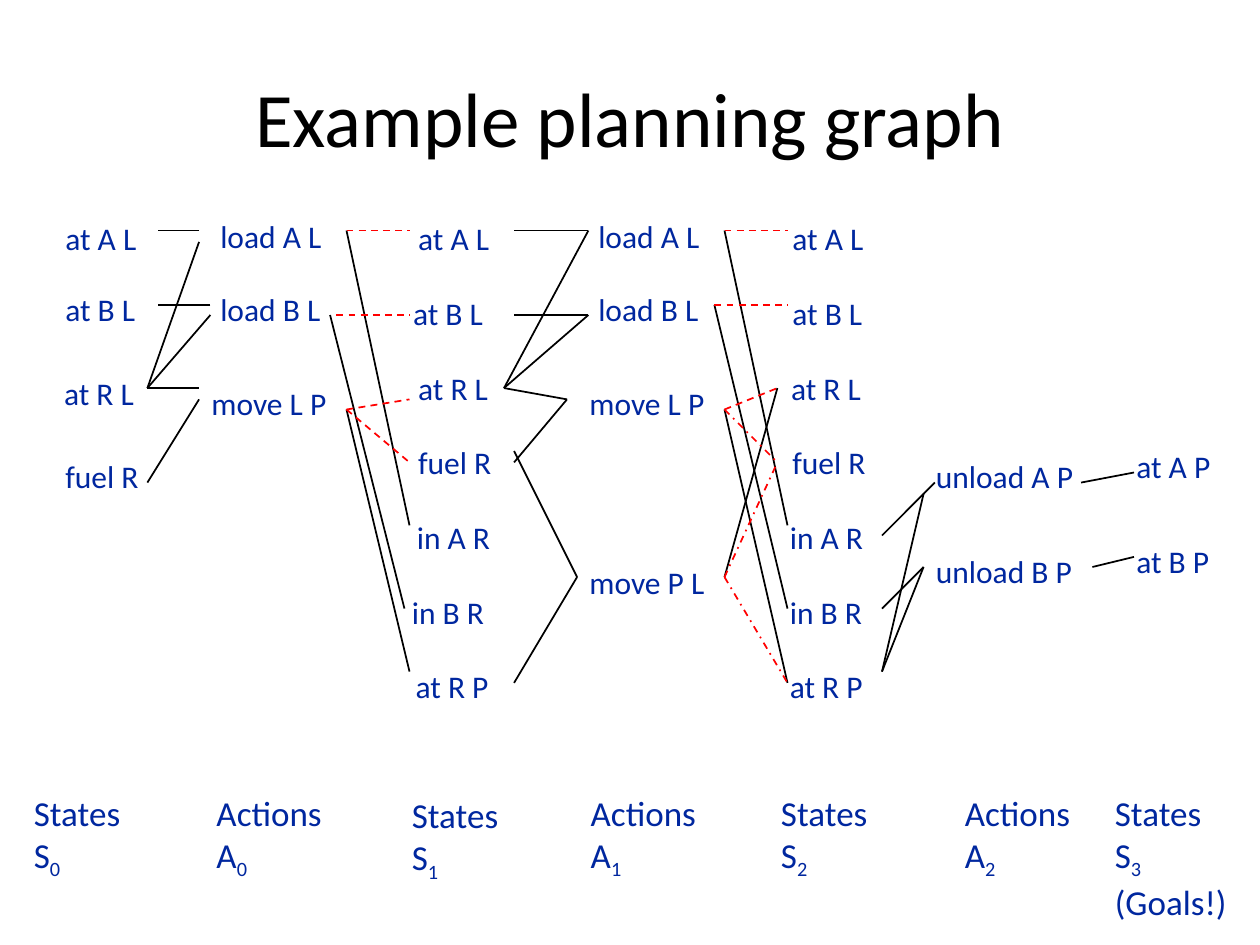
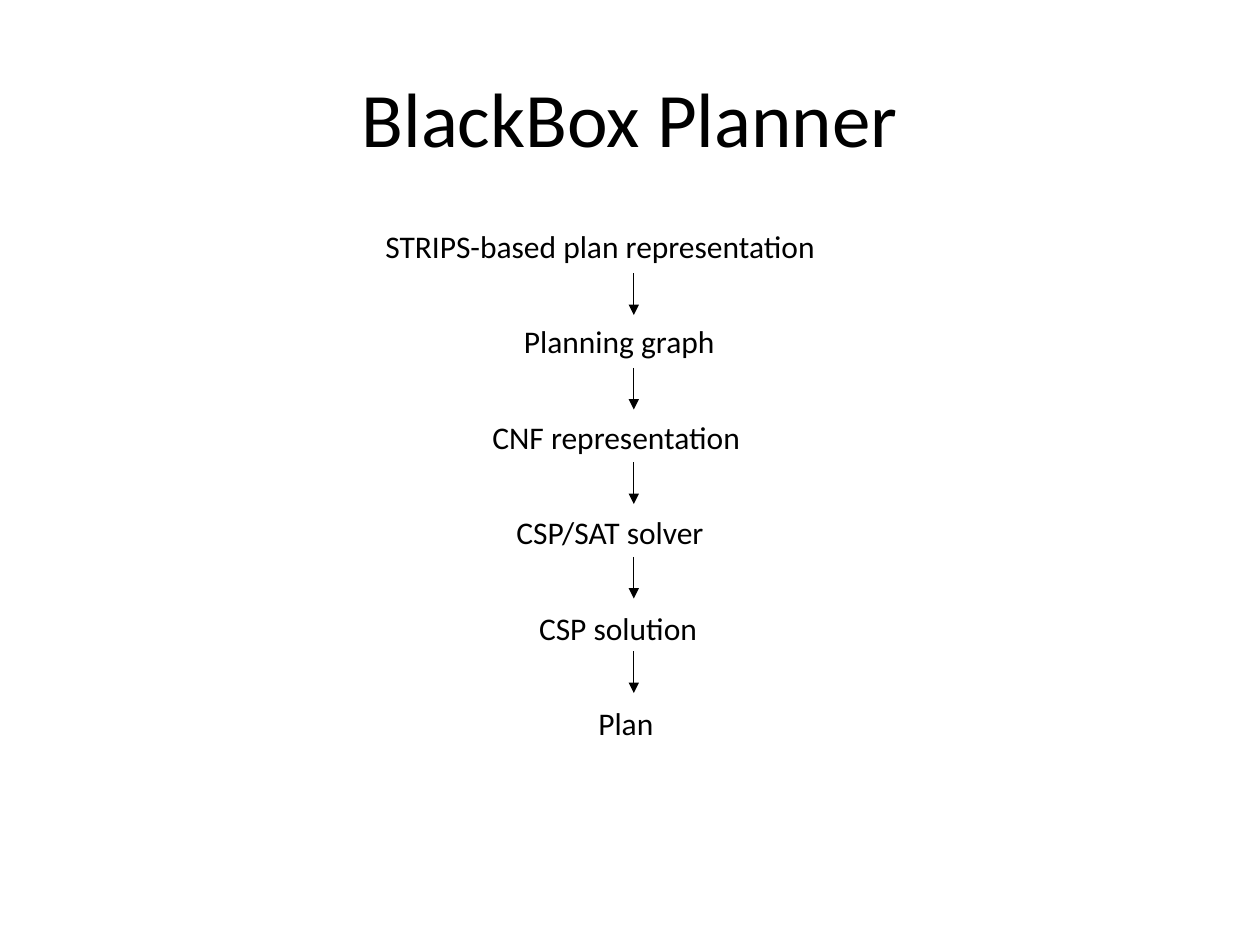
import dataclasses

import pptx
import pptx.dml.color
import pptx.enum.dml
import pptx.enum.shapes
import pptx.enum.text
import pptx.oxml
import pptx.oxml.ns
import pptx.util

Inches = pptx.util.Inches
Dash = pptx.enum.dml.MSO_LINE


@dataclasses.dataclass(frozen=True)
class Theme:
    font: str = "Calibri"
    ink: str = "000000"
    label: str = "00279F"
    mutex: str = "FF0000"
    title_size: int = 44
    layer_size: int = 20
    body_size: int = 18
    edge_width: float = 1
    arrow_width: float = 0.75
    title_box: tuple = (0.5, 0.3, 9, 1.25)


THEME = Theme()

# ---- Content: planning graph ----
GRAPH_TITLE = "Example planning graph"

# Layer caption ("_" starts a subscript), left, top, width
LAYERS = [
    ("States\nS_0", 0.17, 6.23, 0.93),
    ("Actions\nA_0", 1.62, 6.23, 1.04),
    ("States\nS_1", 3.17, 6.25, 0.93),
    ("Actions\nA_1", 4.59, 6.23, 1.04),
    ("States\nS_2", 6.1, 6.23, 0.93),
    ("Actions\nA_2", 7.56, 6.23, 1.04),
    ("States\nS_3\n(Goals!)", 8.75, 6.23, 1.1),
]

# First and last layers: text, left, top
INITIAL_STATE = [("at A L", 0.42, 1.69), ("at B L", 0.42, 2.25),
                 ("at R L", 0.41, 2.92), ("fuel R", 0.42, 3.58)]
UNLOADING = [("unload A P", 7.33, 3.58), ("unload B P", 7.33, 4.33)]
GOALS = [("at A P", 8.92, 3.5), ("at B P", 8.92, 4.25)]

# Actions repeated in A0 and A1: text, left in A0, top
LOADING = [("load A L", 1.65, 1.67), ("load B L", 1.65, 2.25), ("move L P", 1.58, 3)]
ACTION_LAYER_STEP = 3
RETURN_MOVE = ("move P L", 4.58, 4.42)

# Facts repeated in S1 and S2, with their lefts in each
FACTS = ["at A L", "at B L", "at R L", "fuel R", "in A R", "in B R", "at R P"]
FACT_LEFTS = [
    (3.22, 3.18, 3.22, 3.22, 3.21, 3.17, 3.2),
    (6.19, 6.19, 6.18, 6.19, 6.17, 6.17, 6.17),
]
FACT_TOP, FACT_STEP = 1.69, 0.593

# Label widths by leading word
LABEL_WIDTHS = {"at": 0.78, "fuel": 0.79, "in": 0.79, "load": 1.02,
                "move": 1.13, "unload": 1.3}
LOCATION_P_WIDTH = 0.82

# Edges: shared end, then the other ends
PRECONDITIONS = [
    ((1.58, 1.83), [(1.25, 1.83)]),
    ((1.17, 3.08), [(1.58, 1.92), (1.67, 2.5), (1.58, 3.08)]),
    ((1.67, 2.42), [(1.25, 2.42)]),
    ((1.58, 3.17), [(1.17, 3.83)]),
    ((4.67, 1.83), [(4.08, 1.83), (4, 3.08)]),
    ((4.67, 2.5), [(4.08, 2.5), (4, 3.08)]),
    ((4.5, 3.17), [(4.08, 3.67), (4, 3.08)]),
    ((4.58, 4.58), [(4.08, 3.58), (4.08, 5.42)]),
    ((7.42, 3.83), [(7, 4.25)]),
    ((7.33, 3.92), [(7, 5.33)]),
    ((7.33, 4.5), [(7, 4.83), (7, 5.33)]),
]
ADDED_FACTS = [
    ((2.75, 1.83), [(3.25, 4.17)]),
    ((2.62, 2.5), [(3.21, 4.83)]),
    ((2.75, 3.25), [(3.25, 5.33)]),
    ((5.75, 1.83), [(6.25, 4.17)]),
    ((5.67, 2.42), [(6.25, 4.83)]),
    ((5.75, 3.25), [(6.25, 5.42)]),
    ((5.75, 4.58), [(6.17, 3.08)]),
    ((8.58, 3.83), [(9, 3.75)]),
    ((8.67, 4.5), [(9, 4.42)]),
]
DELETED_FACTS = [
    ((2.75, 1.83), [(3.25, 1.83)]),
    ((2.67, 2.5), [(3.25, 2.5)]),
    ((2.75, 3.25), [(3.25, 3.17), (3.25, 3.67)]),
    ((5.75, 1.83), [(6.25, 1.83)]),
    ((5.67, 2.42), [(6.25, 2.42)]),
    ((5.75, 3.25), [(6.17, 3.08)]),
]
DELETED_BY_MOVES = [
    ((5.75, 3.25), [(6.17, 3.67)]),
    ((5.75, 4.58), [(6.25, 5.42), (6.17, 3.67)]),
]
EDGE_STYLES = [
    (PRECONDITIONS, THEME.ink, None),
    (ADDED_FACTS, THEME.ink, None),
    (DELETED_FACTS, THEME.mutex, Dash.DASH),
    (DELETED_BY_MOVES, THEME.mutex, Dash.DASH_DOT),
]

# ---- Content: planner pipeline ----
PIPELINE_TITLE = "BlackBox Planner"
STAGES = [  # text, left, width
    ("STRIPS-based plan representation", 2.96, 3.66),
    ("Planning graph", 4.06, 1.74),
    ("CNF representation", 3.81, 2.2),
    ("CSP/SAT solver", 4, 1.74),
    ("CSP solution", 4.18, 1.47),
    ("Plan", 4.65, 0.64),
]
STAGE_TOP, STAGE_STEP = 1.75, 0.758
ARROW_X, ARROW_TOP, ARROW_STEP, ARROW_LENGTH = 5.03, 2.17, 0.75, 0.33


# ---- Helpers ----
def write(frame, text, *, size, color, align=None):
    """Fill a text frame; each line is a paragraph, "_" starts a subscript."""
    for index, line in enumerate(text.split("\n")):
        paragraph = frame.add_paragraph() if index else frame.paragraphs[0]
        paragraph.alignment = align
        base, _, subscript = line.partition("_")
        for part, baseline in ((base, None), (subscript, "-25000")):
            if not part:
                continue
            run = paragraph.add_run()
            run.text = part
            run.font.name = THEME.font
            run.font.size = pptx.util.Pt(size)
            run.font.color.rgb = pptx.dml.color.RGBColor.from_string(color)
            if baseline:
                run.font._element.set("baseline", baseline)


def add_label(slide, text, left, top, width, *, size=THEME.body_size, color=THEME.label):
    height = 0.1 + (text.count("\n") + 1) * size / 60
    label = slide.shapes.add_textbox(*map(Inches, (left, top, width, height)))
    label.text_frame.word_wrap = False
    label.text_frame.auto_size = pptx.enum.text.MSO_AUTO_SIZE.SHAPE_TO_FIT_TEXT
    write(label.text_frame, text, size=size, color=color)


def add_node(slide, text, left, top):
    width = LABEL_WIDTHS[text.split()[0]]
    if text.startswith("at") and text.endswith("P"):
        width = LOCATION_P_WIDTH
    add_label(slide, text, left, top, width)


def add_edge(slide, start, end, *, color=THEME.ink, width=THEME.edge_width,
             dash=None, arrow=False):
    edge = slide.shapes.add_connector(
        pptx.enum.shapes.MSO_CONNECTOR.STRAIGHT, *map(Inches, (*start, *end)))
    edge.line.color.rgb = pptx.dml.color.RGBColor.from_string(color)
    edge.line.width = pptx.util.Pt(width)
    if dash:
        edge.line.dash_style = dash
    properties = edge._element.spPr
    if arrow:
        head = pptx.oxml.parse_xml(
            f'<a:tailEnd {pptx.oxml.ns.nsdecls("a")} type="triangle"/>')
        properties.find(pptx.oxml.ns.qn("a:ln")).append(head)
    properties.append(pptx.oxml.parse_xml(f'<a:effectLst {pptx.oxml.ns.nsdecls("a")}/>'))


def add_titled_slide(deck, heading):
    slide = deck.slides.add_slide(deck.slide_layouts.get_by_name("Title Only"))
    title = slide.shapes.title
    title.left, title.top, title.width, title.height = map(Inches, THEME.title_box)
    title.text_frame.vertical_anchor = pptx.enum.text.MSO_ANCHOR.MIDDLE
    write(title.text_frame, heading, size=THEME.title_size, color=THEME.ink,
          align=pptx.enum.text.PP_ALIGN.CENTER)
    return slide


# ---- Slides ----
def build_planning_graph(deck):
    slide = add_titled_slide(deck, GRAPH_TITLE)
    for caption, left, top, width in LAYERS:
        add_label(slide, caption, left, top, width, size=THEME.layer_size)

    nodes = [*INITIAL_STATE, *UNLOADING, *GOALS, RETURN_MOVE]
    for layer in range(2):
        nodes += [(action, left + layer * ACTION_LAYER_STEP, top)
                  for action, left, top in LOADING]
    for lefts in FACT_LEFTS:
        nodes += [(fact, left, FACT_TOP + row * FACT_STEP)
                  for row, (fact, left) in enumerate(zip(FACTS, lefts))]
    for node in nodes:
        add_node(slide, *node)

    for fans, color, dash in EDGE_STYLES:
        for hub, ends in fans:
            for end in ends:
                add_edge(slide, hub, end, color=color, dash=dash)


def build_pipeline(deck):
    slide = add_titled_slide(deck, PIPELINE_TITLE)
    for row, (stage, left, width) in enumerate(STAGES):
        add_label(slide, stage, left, STAGE_TOP + row * STAGE_STEP, width, color=THEME.ink)
    for gap in range(len(STAGES) - 1):
        top = ARROW_TOP + gap * ARROW_STEP
        add_edge(slide, (ARROW_X, top), (ARROW_X, top + ARROW_LENGTH),
                 width=THEME.arrow_width, arrow=True)


def main():
    deck = pptx.Presentation()
    deck.slide_width, deck.slide_height = Inches(10), Inches(7.5)
    build_planning_graph(deck)
    build_pipeline(deck)
    deck.save("out.pptx")


if __name__ == "__main__":
    main()
